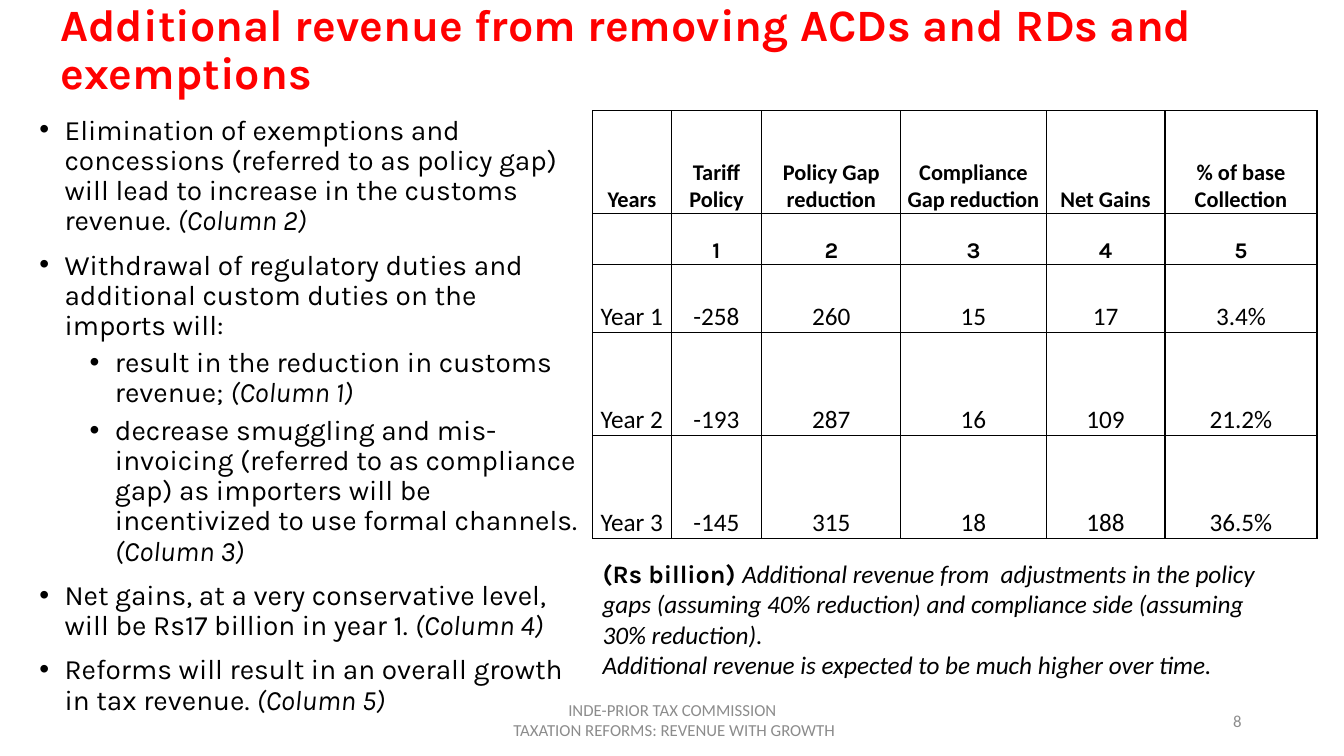
from lxml.etree import SubElement
from pptx import Presentation
from pptx.dml.color import RGBColor
from pptx.enum.text import MSO_ANCHOR as Anchor, PP_ALIGN as Align
from pptx.oxml.ns import qn
from pptx.util import Emu, Inches, Pt

BLACK = RGBColor(0x00, 0x00, 0x00)
WHITE = RGBColor(0xFF, 0xFF, 0xFF)
RED = RGBColor(0xFF, 0x00, 0x00)
GREY = RGBColor(0x8C, 0x8C, 0x8C)
HEAD_FONT, TEXT_FONT = "Karla", "Calibri"
GRID_COLS, GRID_ROWS = 32, 18

# Each bullet: level, statement, table column it refers to
BULLETS = [
    (0, "Elimination of exemptions and concessions (referred to as policy gap) "
        "will lead to increase in the customs revenue. ", "(Column 2)"),
    (0, "Withdrawal of regulatory duties and additional custom duties on the "
        "imports will:", ""),
    (1, "result in the reduction in customs revenue; ", "(Column 1)"),
    (1, "decrease smuggling and mis-invoicing (referred to as compliance gap) "
        "as importers will be incentivized to use formal channels. ", "(Column 3)"),
    (0, "Net gains, at a very conservative level, will be Rs17 billion in year 1. ",
     "(Column 4)"),
    (0, "Reforms will result in an overall growth in tax revenue. ", "(Column 5)"),
]
GAINS = [
    ["Years", "Tariff Policy", "Policy Gap reduction", "Compliance Gap reduction",
     "Net Gains", "% of base Collection"],
    ["", "1", "2", "3", "4", "5"],
    ["Year 1", "-258", "260", "15", "17", "3.4%"],
    ["Year 2", "-193", "287", "16", "109", "21.2%"],
    ["Year 3", "-145", "315", "18", "188", "36.5%"],
]
COL_WIDTHS = [1.87, 2.16, 3.31, 3.46, 2.83, 3.62]
ROW_HEIGHTS = [2.45, 1.21, 1.62, 2.45, 2.45]


def add_run(p, text, font=TEXT_FONT, size=18, color=BLACK, bold=False, italic=False):
    r = p.add_run()
    r.text = text
    r.font.name, r.font.size = font, Pt(size)
    r.font.bold, r.font.italic = bold, italic
    r.font.color.rgb = color
    return r


class SlideBuilder:
    def __init__(self, prs):
        self.s = prs.slides.add_slide(prs.slide_layouts[6])
        self.col = prs.slide_width / GRID_COLS
        self.row = prs.slide_height / GRID_ROWS

    def x(self, cols):
        return Emu(round(cols * self.col))

    def y(self, rows):
        return Emu(round(rows * self.row))

    def box(self, left, top, width, height):
        return self.x(left), self.y(top), self.x(width), self.y(height)

    def text(self, area, paragraphs, anchor=Anchor.TOP, align=Align.LEFT, spacing=None):
        """Each paragraph is a list of (text, format) pairs."""
        tf = self.s.shapes.add_textbox(*self.box(*area)).text_frame
        tf.word_wrap, tf.vertical_anchor = True, anchor
        for i, runs in enumerate(paragraphs):
            p = tf.add_paragraph() if i else tf.paragraphs[0]
            p.alignment, p.line_spacing = align, spacing
            for text, style in runs:
                add_run(p, text, **style)
        return tf

    def bullets(self, area, items):
        style = dict(font=HEAD_FONT, size=20)
        paragraphs = [[(text, style)] + ([(ref, dict(style, italic=True))] if ref else [])
                      for _, text, ref in items]
        tf = self.text(area, paragraphs, spacing=0.9)
        for p, (level, _, _) in zip(tf.paragraphs, items):
            p.level = level
            p.space_before = Pt(5 if level else 10)
            pPr = p._p.get_or_add_pPr()
            pPr.set("marL", str(Inches(0.25 + 0.5 * level)))
            pPr.set("indent", str(-Inches(0.25)))
            SubElement(pPr, qn("a:buFont"), typeface="Arial")
            SubElement(pPr, qn("a:buChar"), char="•")

    def table(self, left, top, data, widths, heights):
        area = self.box(left, top, sum(widths), sum(heights))
        table = self.s.shapes.add_table(len(data), len(widths), *area).table
        table.first_row = table.horz_banding = False
        for column, width in zip(table.columns, widths):
            column.width = self.x(width)
        for row, height in zip(table.rows, heights):
            row.height = self.y(height)
        for i, values in enumerate(data):
            head = i < 2
            style = dict(font=HEAD_FONT if i == 1 else TEXT_FONT,
                         size=16 if head else 18, bold=head)
            for j, value in enumerate(values):
                self.cell(table.cell(i, j), value, style)

    def cell(self, cell, value, style):
        cell.vertical_anchor = Anchor.BOTTOM
        cell.margin_left = cell.margin_right = cell.margin_top = Inches(0.01)
        cell.margin_bottom = 0
        p = cell.text_frame.paragraphs[0]
        p.alignment = Align.CENTER
        if value:
            add_run(p, value, **style)
        tcPr = cell._tc.get_or_add_tcPr()
        for side in ("a:lnL", "a:lnR", "a:lnT", "a:lnB"):
            ln = SubElement(tcPr, qn(side), w=str(Pt(1)))
            SubElement(SubElement(ln, qn("a:solidFill")), qn("a:srgbClr"), val=str(BLACK))
        cell.fill.solid()
        cell.fill.fore_color.rgb = WHITE


def main():
    prs = Presentation()
    prs.slide_width, prs.slide_height = Inches(13.33), Inches(7.5)
    slide = SlideBuilder(prs)

    # Title
    slide.text((1.2, 0.12, 29.57, 2.18),
               [[("Additional revenue from removing ACDs and RDs and exemptions",
                  dict(font=HEAD_FONT, size=32, color=RED, bold=True))]],
               anchor=Anchor.MIDDLE, spacing=0.9)

    # Arguments on the left, revenue table on the right
    slide.bullets((0.7, 2.64, 13.44, 14.04), BULLETS)
    slide.table(14.11, 2.64, GAINS, COL_WIDTHS, ROW_HEIGHTS)

    # Note under the table
    note = dict(italic=True)
    slide.text((14.11, 13.18, 16.66, 3.14), [
        [("(Rs billion) ", dict(font=HEAD_FONT, bold=True)),
         ("Additional revenue from  adjustments in the policy gaps (assuming 40% "
          "reduction) and compliance side (assuming 30% reduction).", note)],
        [("Additional revenue is expected to be much higher over time.", note)],
    ])

    # Footer and slide number
    small = dict(size=12, color=GREY)
    slide.text((10.61, 16.66, 10.8, 0.96),
               [[("INDE-PRIOR TAX COMMISSION", small)],
                [(" TAXATION REFORMS: REVENUE WITH GROWTH", small)]],
               anchor=Anchor.MIDDLE, align=Align.CENTER)
    slide.text((22.6, 16.68, 7.2, 0.96), [[("8", small)]],
               anchor=Anchor.MIDDLE, align=Align.RIGHT)

    prs.save("out.pptx")


if __name__ == "__main__":
    main()
